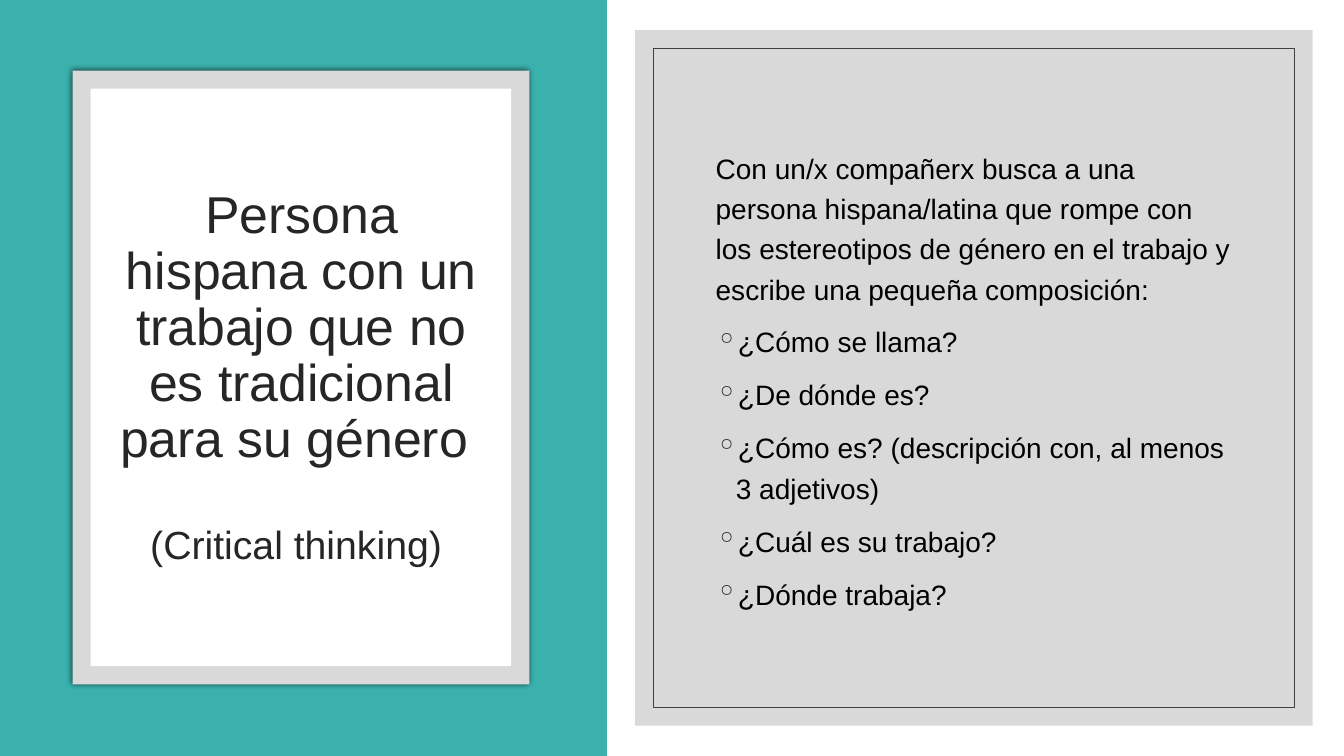
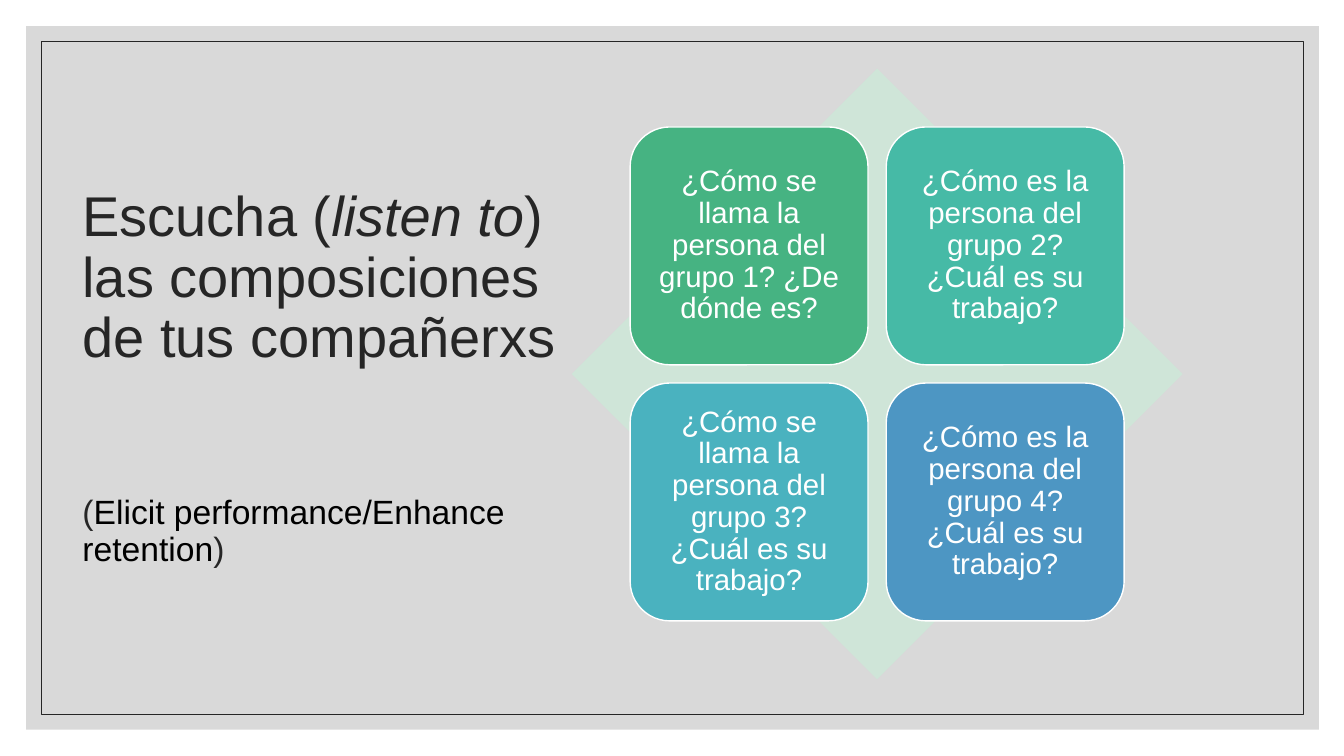
from dataclasses import dataclass

from lxml.etree import SubElement
from pptx import Presentation
from pptx.dml.color import RGBColor
from pptx.enum.shapes import MSO_SHAPE as Preset
from pptx.enum.text import MSO_ANCHOR as Anchor, PP_ALIGN as Align
from pptx.oxml.ns import qn
from pptx.util import Inches, Pt


@dataclass(frozen=True)
class Theme:
    """Colours, type sizes and spacing shared by the slides."""

    font: str = "Arial"
    white: str = "FFFFFF"
    black: str = "000000"
    ink: str = "262626"
    frame: str = "404040"
    panel: str = "D9D9D9"
    teal: str = "3BB1AE"
    diamond: str = "CFE5D8"
    cards: tuple = ("46B382", "46BAA6", "4AB2BF", "4D96C3")
    card_title: int = 37
    card_subtitle: int = 28
    title: int = 40
    subtitle: int = 24
    body: int = 20
    card_text: int = 21
    tight: float = 0.9
    loose: float = 1.2


THEME = Theme()
QUESTIONS = (
    "¿Cómo se llama?",
    "¿De dónde es?",
    "¿Cómo es? (descripción con, al menos 3 adjetivos)",
    "¿Cuál es su trabajo?",
    "¿Dónde trabaja?",
)
GROUP_QUESTIONS = (
    "¿Cómo se llama la persona del grupo 1? ¿De dónde es?",
    "¿Cómo es la persona del grupo 2? ¿Cuál es su trabajo?",
    "¿Cómo se llama la persona del grupo 3? ¿Cuál es su trabajo?",
    "¿Cómo es la persona del grupo 4? ¿Cuál es su trabajo?",
)


def add_block(slide, preset, left, top, width, height, fill=None, line=None, weight=0.5):
    """Add a flat preset shape with optional fill and outline."""
    shape = slide.shapes.add_shape(
        preset, Inches(left), Inches(top), Inches(width), Inches(height)
    )
    shape.shadow.inherit = False
    if fill:
        shape.fill.solid()
        shape.fill.fore_color.rgb = RGBColor.from_string(fill)
    else:
        shape.fill.background()
    if line:
        shape.line.color.rgb = RGBColor.from_string(line)
        shape.line.width = Pt(weight)
    else:
        shape.line.fill.background()
    return shape


def add_framed_panel(slide, left, top, width, height, inset, fill=None, line=None):
    """Add a grey panel with an evenly inset inner rectangle."""
    panel = add_block(slide, Preset.RECTANGLE, left, top, width, height, THEME.panel)
    add_block(
        slide, Preset.RECTANGLE, left + inset, top + inset,
        width - 2 * inset, height - 2 * inset, fill, line,
    )
    return panel


def add_glow_shadow(shape, blur=4, opacity=66):
    """Give a shape a soft black shadow on all sides."""
    effects = shape.element.spPr.find(qn("a:effectLst"))
    shadow = SubElement(
        effects, qn("a:outerShdw"), blurRad=str(Pt(blur)), dist="0", algn="ctr", rotWithShape="0"
    )
    color = SubElement(shadow, qn("a:srgbClr"), val=THEME.black)
    SubElement(color, qn("a:alpha"), val=str(opacity * 1000))


def add_text_frame(slide, left, top, width, height):
    """Add a wrapping, vertically centred text box and return its frame."""
    box = slide.shapes.add_textbox(Inches(left), Inches(top), Inches(width), Inches(height))
    box.text_frame.word_wrap = True
    box.text_frame.vertical_anchor = Anchor.MIDDLE
    return box.text_frame


def write(frame, *pieces, size, color=THEME.ink, align=Align.LEFT,
          spacing=THEME.tight, before=0, bullet=None):
    """Write one paragraph from strings or (text, font overrides) pairs."""
    first = frame.paragraphs[0]
    paragraph = frame.add_paragraph() if first.runs else first
    paragraph.alignment = align
    paragraph.line_spacing = spacing
    paragraph.space_before = Pt(before)
    if bullet:
        add_bullet(paragraph, bullet)
    for piece in pieces:
        text, override = (piece, {}) if isinstance(piece, str) else piece
        run = paragraph.add_run()
        run.text = text
        run.font.name = THEME.font
        run.font.size = Pt(size)
        run.font.italic = override.get("italic", False)
        run.font.color.rgb = RGBColor.from_string(override.get("color", color))


def add_bullet(paragraph, character, indent=0.2):
    """Set a hanging bullet on a paragraph."""
    properties = paragraph._p.get_or_add_pPr()
    properties.set("marL", str(Inches(indent)))
    properties.set("indent", str(-Inches(indent)))
    color = SubElement(properties, qn("a:buClr"))
    SubElement(color, qn("a:srgbClr"), val=THEME.ink)
    SubElement(properties, qn("a:buChar"), char=character)


def add_question_card(slide, left, top, size, fill, text):
    """Add a rounded card with centred white text."""
    card = add_block(slide, Preset.ROUNDED_RECTANGLE, left, top, size, size, fill, THEME.white, 1)
    frame = card.text_frame
    frame.word_wrap = True
    frame.vertical_anchor = Anchor.MIDDLE
    frame.margin_left = frame.margin_right = Inches(0.09)
    frame.margin_top = frame.margin_bottom = Inches(0.09)
    write(frame, text, size=THEME.card_text, color=THEME.white, align=Align.CENTER)


def add_question_matrix(slide, center_x, center_y, card_size=2.36, gap=0.18, diamond=6.06):
    """Add a two by two grid of question cards over a diamond."""
    add_block(
        slide, Preset.DIAMOND, center_x - diamond / 2, center_y - diamond / 2,
        diamond, diamond, THEME.diamond,
    )
    offset = card_size + gap / 2
    for index, (fill, text) in enumerate(zip(THEME.cards, GROUP_QUESTIONS)):
        row, column = divmod(index, 2)
        left = center_x - offset + column * (card_size + gap)
        top = center_y - offset + row * (card_size + gap)
        add_question_card(slide, left, top, card_size, fill, text)


def build_composition_slide(slide):
    """Build the writing task slide."""
    add_block(slide, Preset.RECTANGLE, 0, 0, 6.02, 7.5, THEME.teal)
    card = add_framed_panel(slide, 0.72, 0.7, 4.53, 6.09, 0.18, fill=THEME.white)
    add_glow_shadow(card)
    title = add_text_frame(slide, 1.08, 1.3, 3.82, 4.91)
    write(
        title, "Persona hispana con un trabajo que no es tradicional para su género ",
        size=THEME.card_title, align=Align.CENTER,
    )
    write(
        title, "(Critical thinking) ",
        size=THEME.card_subtitle, align=Align.CENTER, before=41,
    )
    add_framed_panel(slide, 6.3, 0.3, 6.72, 6.9, 0.18, line=THEME.frame)
    body = add_text_frame(slide, 7, 1.02, 5.33, 5.45)
    body_format = dict(size=THEME.body, color=THEME.black, spacing=THEME.loose, before=9)
    write(
        body,
        "Con un/x compañerx busca a una persona hispana/latina que rompe con "
        "los estereotipos de género en el trabajo y escribe una pequeña composición:",
        **body_format,
    )
    for question in QUESTIONS:
        write(body, question, bullet="◦", **body_format)


def build_listening_slide(slide):
    """Build the listening task slide."""
    add_framed_panel(slide, 0.26, 0.26, 12.82, 6.98, 0.15, line=THEME.ink)
    title = add_text_frame(slide, 0.72, 1.05, 4.97, 5.41)
    write(
        title, "Escucha (", ("listen to", {"italic": True}),
        ") las composiciones de tus compañerxs", size=THEME.title,
    )
    write(
        title, "(", ("Elicit performance/Enhance retention", {"color": THEME.black}), ")",
        size=THEME.subtitle, before=90,
    )
    add_question_matrix(slide, 8.7, 3.71)


def main():
    """Build and save the presentation."""
    presentation = Presentation()
    presentation.slide_width = Inches(13.33)
    presentation.slide_height = Inches(7.5)
    blank = presentation.slide_layouts[6]
    for build in (build_composition_slide, build_listening_slide):
        build(presentation.slides.add_slide(blank))
    presentation.save("out.pptx")


if __name__ == "__main__":
    main()
